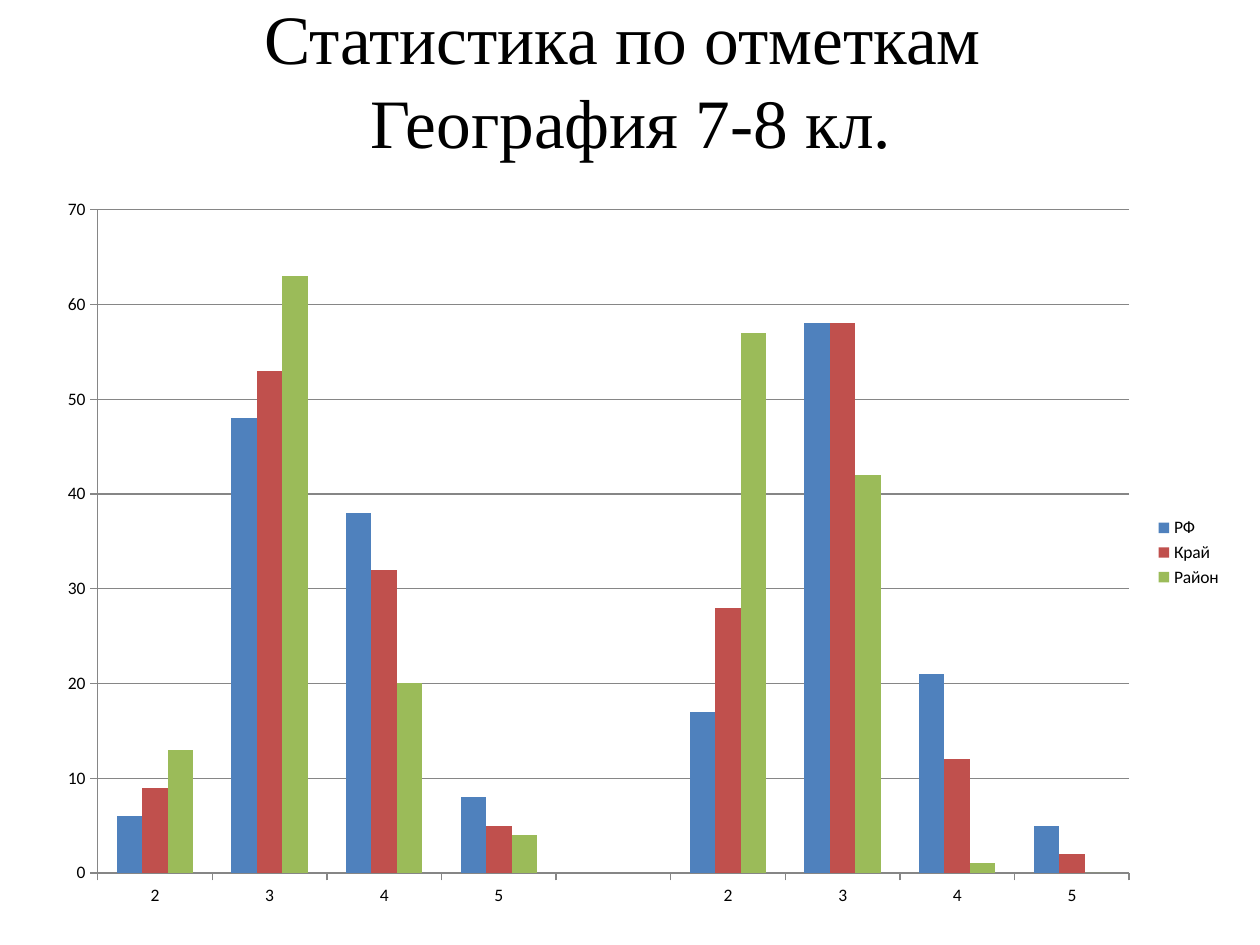
import pptx
import pptx.util
import pptx.chart.data
import pptx.dml.color
import pptx.enum.chart
import pptx.enum.text

Inches, Pt = pptx.util.Inches, pptx.util.Pt
RGB = pptx.dml.color.RGBColor
Kind = pptx.enum.chart

BLACK = RGB(0x00, 0x00, 0x00)
GRAY = RGB(0x86, 0x86, 0x86)
BLUE = RGB(0x4F, 0x81, 0xBD)
RED = RGB(0xC0, 0x50, 0x4D)
GREEN = RGB(0x9B, 0xBB, 0x59)

# Content: marks of two grades, with a gap between them
TITLE = ["Статистика по отметкам ", "География 7-8 кл."]
MARKS = ["2", "3", "4", "5"]
SERIES = [
    ("РФ", BLUE, [6, 48, 38, 8], [17, 58, 21, 5]),
    ("Край", RED, [9, 53, 32, 5], [28, 58, 12, 2]),
    ("Район", GREEN, [13, 63, 20, 4], [57, 42, 1, 0]),
]

deck = pptx.Presentation()
deck.slide_width, deck.slide_height = Inches(10), Inches(7.5)
slide = deck.slides.add_slide(deck.slide_layouts[6])

# Title
box = slide.shapes.add_textbox(Inches(0.51), 0, Inches(9), Inches(1.25))
frame = box.text_frame
frame.word_wrap = True
frame.vertical_anchor = pptx.enum.text.MSO_ANCHOR.MIDDLE
para = frame.paragraphs[0]
para.alignment = pptx.enum.text.PP_ALIGN.CENTER
for i, line in enumerate(TITLE):
    if i:
        para.add_line_break()
    run = para.add_run()
    run.text = line
    run.font.name = "Times New Roman"
    run.font.size = Pt(39.6)
    run.font.color.rgb = BLACK

# Chart
data = pptx.chart.data.CategoryChartData()
data.categories = MARKS + [""] + MARKS
for name, color, first, second in SERIES:
    data.add_series(name, first + [None] + second)
chart = slide.shapes.add_chart(
    Kind.XL_CHART_TYPE.COLUMN_CLUSTERED,
    Inches(0.35), Inches(1.47), Inches(9.45), Inches(5.83), data).chart
chart.has_title = False
chart.font.name = "Calibri"
chart.font.size = Pt(10)
chart.font.color.rgb = BLACK

plot = chart.plots[0]
plot.gap_width = 150
plot.overlap = 0
plot.vary_by_categories = False
for bars, (name, color, first, second) in zip(plot.series, SERIES):
    bars.format.fill.solid()
    bars.format.fill.fore_color.rgb = color
    bars.invert_if_negative = False

# Axes and legend
value = chart.value_axis
value.minimum_scale, value.maximum_scale, value.major_unit = 0, 70, 10
value.has_major_gridlines = True
for axis in (chart.category_axis, value):
    axis.major_tick_mark = Kind.XL_TICK_MARK.OUTSIDE
    axis.minor_tick_mark = Kind.XL_TICK_MARK.NONE
for part in (chart.category_axis, value, value.major_gridlines):
    part.format.line.color.rgb = GRAY
    part.format.line.width = Pt(0.75)
chart.has_legend = True
chart.legend.position = Kind.XL_LEGEND_POSITION.RIGHT
chart.legend.include_in_layout = False

deck.save("out.pptx")
